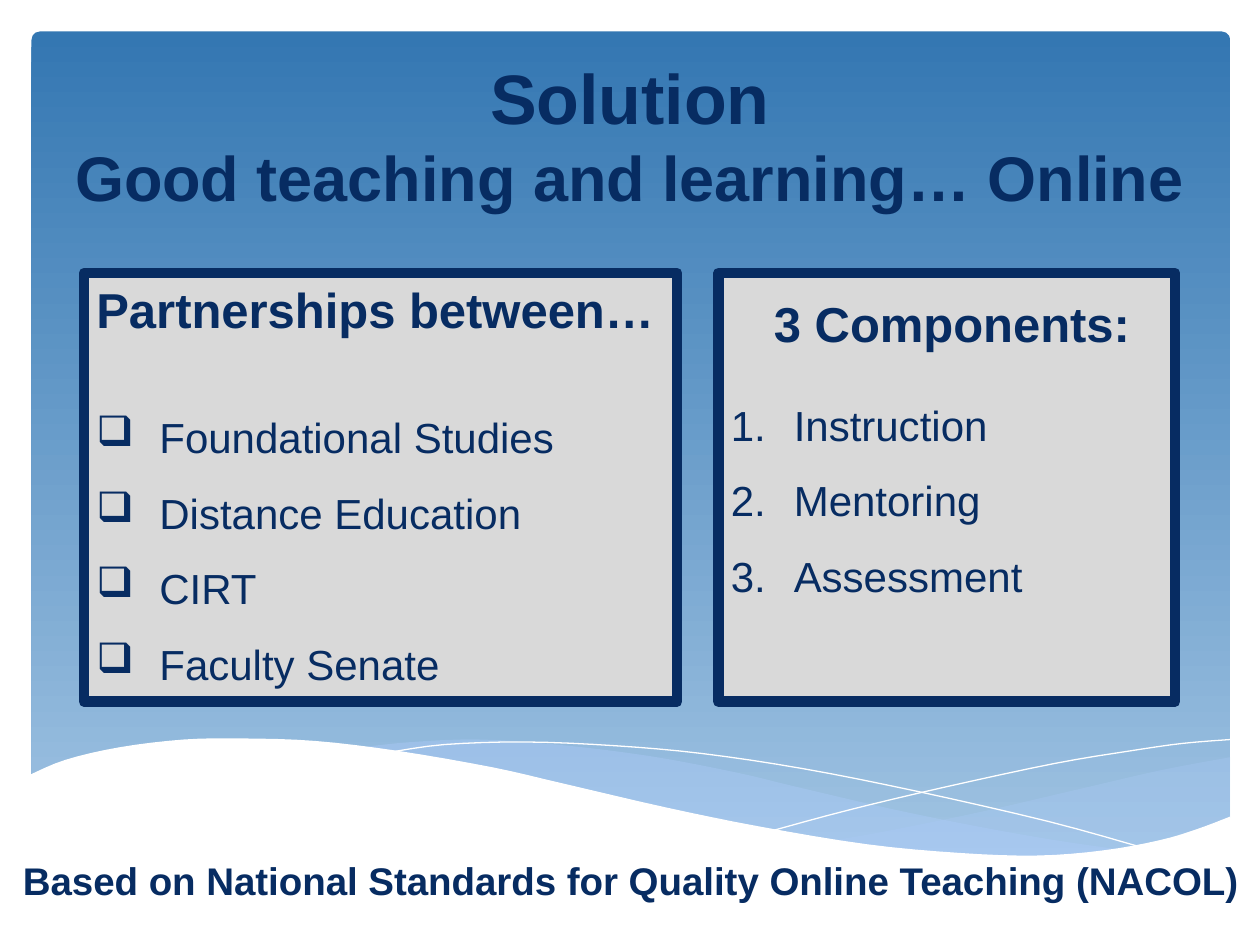
import pptx
import pptx.dml.color
import pptx.enum.shapes
import pptx.enum.text
import pptx.oxml
import pptx.oxml.ns
import pptx.util
from lxml import etree

Pt = pptx.util.Pt
RGBColor = pptx.dml.color.RGBColor
ALIGN = pptx.enum.text.PP_ALIGN
ANCHOR = pptx.enum.text.MSO_ANCHOR
SHAPE = pptx.enum.shapes.MSO_SHAPE
qn = pptx.oxml.ns.qn

NAVY = RGBColor(0x07, 0x2C, 0x62)
GREY = RGBColor(0xD9, 0xD9, 0xD9)
WHITE = RGBColor(0xFF, 0xFF, 0xFF)
SKY_TOP = RGBColor(0x34, 0x77, 0xB2)
SKY_BOTTOM = RGBColor(0xA1, 0xC4, 0xE3)
TINT = RGBColor(0xAC, 0xCB, 0xF9)

FRONT_WAVE = [(0, 20.8), (20.4, 12.2), (51.4, 5), (88, 0.6), (122, 0), (163, 1.4),
              (210.5, 7.1), (264.5, 16.5), (305, 25.8), (364, 39.5), (417, 50.3),
              (478, 60.4), (531, 65.4), (575.5, 66.9), (613, 64), (645.4, 58.2),
              (667, 51.8), (686, 44.6)]
RIGHT_TOP = [(686, 10.7), (647, 18), (603.6, 28), (544.6, 41.7), (492, 52.5), (459.6, 58.2)]
RIGHT_BOTTOM = [(459.6, 58.2), (500.7, 63.3), (546, 66.9), (591.4, 66.9), (629.6, 61.8),
                (662.7, 53.9), (686, 45.3)]
MIDDLE_TOP = [(189.6, 5), (219, 2), (256.6, 0.6), (301, 3.5), (353.8, 10), (403.5, 19.4),
              (436.6, 27.3), (492, 40.2), (541.7, 50.3), (586.4, 58.2), (626.7, 64)]
MIDDLE_BOTTOM = [(626.7, 64), (587, 67.6), (549, 67.6), (503.6, 64.7), (451.7, 57.5),
                 (391, 46), (307, 27.3), (258.8, 16.5), (215.6, 8.6), (189.6, 5)]
FALLING_LINE = [(206, 7.8), (237, 3.5), (283, 2), (335, 4.2), (384, 8.6), (441.6, 17.2),
                (507, 30.2), (582, 47.4), (636.8, 62.6)]
RISING_LINE = [(425, 52.5), (467.6, 41), (522, 28), (585.6, 14.3), (628.8, 7.1),
               (659, 2.8), (686, 0.6)]


def smooth(points, steps=4):
    ends = [points[0], *points, points[-1]]
    curve = []
    for a, b, c, d in zip(ends, ends[1:], ends[2:], ends[3:]):
        for t in (i / steps for i in range(steps)):
            curve.append(tuple(
                b[k] + t / 2 * (c[k] - a[k]
                                + t * (2 * a[k] - 5 * b[k] + 4 * c[k] - d[k])
                                + t * t * (3 * (b[k] - c[k]) + d[k] - a[k]))
                for k in (0, 1)))
    return curve + [points[-1]]


def add_outline(s, box, points, fill=None, alpha=None, line=None):
    x, y = box[:2]
    pts = [(Pt(x + px), Pt(y + py)) for px, py in points]
    builder = s.shapes.build_freeform(*pts[0], scale=1.0)
    builder.add_line_segments(pts[1:], close=fill is not None)
    sp = builder.convert_to_shape()
    sp.shadow.inherit = False
    if fill is None:
        sp.fill.background()
    else:
        sp.fill.solid()
        sp.fill.fore_color.rgb = fill
    if alpha is not None:
        color = sp._element.spPr.find(".//" + qn("a:srgbClr"))
        etree.SubElement(color, qn("a:alpha")).set("val", str(alpha * 1000))
    if line is None:
        sp.line.fill.background()
    else:
        sp.line.color.rgb = line
        sp.line.width = Pt(0)


def add_text(p, text, size=24, bold=False, color=NAVY, font="Arial"):
    r = p.add_run()
    r.text = text
    r.font.size = Pt(size)
    r.font.bold = bold
    r.font.name = font
    r.font.color.rgb = color


def add_textbox(s, box, anchor=ANCHOR.TOP):
    tf = s.shapes.add_textbox(*map(Pt, box)).text_frame
    tf.word_wrap = True
    tf.vertical_anchor = anchor
    return tf


def add_item(p, text, marker, value):
    p.alignment = ALIGN.LEFT
    p.line_spacing = 1.5
    pPr = p._p.get_or_add_pPr()
    pPr.set("marL", str(Pt(36)))
    pPr.set("indent", str(-Pt(36)))
    color = etree.SubElement(pPr, qn("a:buClr"))
    etree.SubElement(color, qn("a:srgbClr")).set("val", str(NAVY))
    attribute = "type" if marker == "a:buAutoNum" else "char"
    etree.SubElement(pPr, qn(marker)).set(attribute, value)
    add_text(p, text)


def add_panel(s, box, anchor):
    sp = s.shapes.add_shape(SHAPE.RECTANGLE, *map(Pt, box))
    sp.shadow.inherit = False
    sp.fill.solid()
    sp.fill.fore_color.rgb = GREY
    sp.line.color.rgb = NAVY
    sp.line.width = Pt(6)
    tf = sp.text_frame
    tf.word_wrap = True
    tf.vertical_anchor = anchor
    return tf


def add_sky(s, box):
    sp = s.shapes.add_shape(SHAPE.ROUNDED_RECTANGLE, *map(Pt, box))
    sp.adjustments[0] = 0.01
    sp.shadow.inherit = False
    sp.line.fill.background()
    sp.fill.gradient()
    sp.fill.gradient_angle = 270
    for stop, color in zip(sp.fill.gradient_stops, (SKY_TOP, SKY_BOTTOM)):
        stop.color.rgb = color


def add_waves(s, box):
    w, h = box[2:]
    add_outline(s, box, smooth(RIGHT_TOP) + smooth(RIGHT_BOTTOM), fill=TINT, alpha=29)
    add_outline(s, box, smooth(MIDDLE_TOP) + smooth(MIDDLE_BOTTOM), fill=TINT, alpha=40)
    for points in (FALLING_LINE, RISING_LINE):
        add_outline(s, box, smooth(points), line=WHITE)
    add_outline(s, box, smooth(FRONT_WAVE) + [(w, h), (0, h)], fill=WHITE)


def add_title(s, box):
    p = add_textbox(s, box, ANCHOR.BOTTOM).paragraphs[0]
    p.alignment = ALIGN.CENTER
    add_text(p, "Solution", size=40, bold=True)
    p.add_line_break()
    add_text(p, "Good teaching and learning… Online", size=36, bold=True)


def add_partnerships(s, box):
    tf = add_panel(s, box, ANCHOR.TOP)
    p = tf.paragraphs[0]
    p.alignment = ALIGN.LEFT
    p.space_after = Pt(27.6)
    add_text(p, "Partnerships between…", size=28, bold=True)
    for text in ("Foundational Studies", "Distance Education", "CIRT", "Faculty Senate"):
        add_item(tf.add_paragraph(), text, "a:buChar", "❑")


def add_components(s, box):
    x, y, w, h = box
    tf = add_panel(s, box, ANCHOR.MIDDLE)
    for i, text in enumerate(("Instruction", "Mentoring", "Assessment")):
        p = tf.add_paragraph() if i else tf.paragraphs[0]
        add_item(p, text, "a:buAutoNum", "arabicPeriod")
    p = add_textbox(s, (x + 3, y + 8, w, 41)).paragraphs[0]
    p.alignment = ALIGN.CENTER
    add_text(p, "3 Components:", size=28, bold=True)


def add_footer(s, box):
    p = add_textbox(s, box).paragraphs[0]
    add_text(p, "Based on National Standards for Quality Online Teaching (NACOL)",
             size=22, bold=True)


def main():
    prs = pptx.Presentation()
    prs.slide_width, prs.slide_height = Pt(720), Pt(540)
    s = prs.slides.add_slide(prs.slide_layouts[6])
    add_sky(s, (18, 18, 685, 475))
    add_waves(s, (17, 422, 686, 105))
    add_title(s, (18, 18, 684, 108))
    add_partnerships(s, (48, 156, 339, 245))
    add_footer(s, (6, 486, 714, 34))
    add_components(s, (410.5, 156, 261, 245))
    prs.save("out.pptx")


if __name__ == "__main__":
    main()
